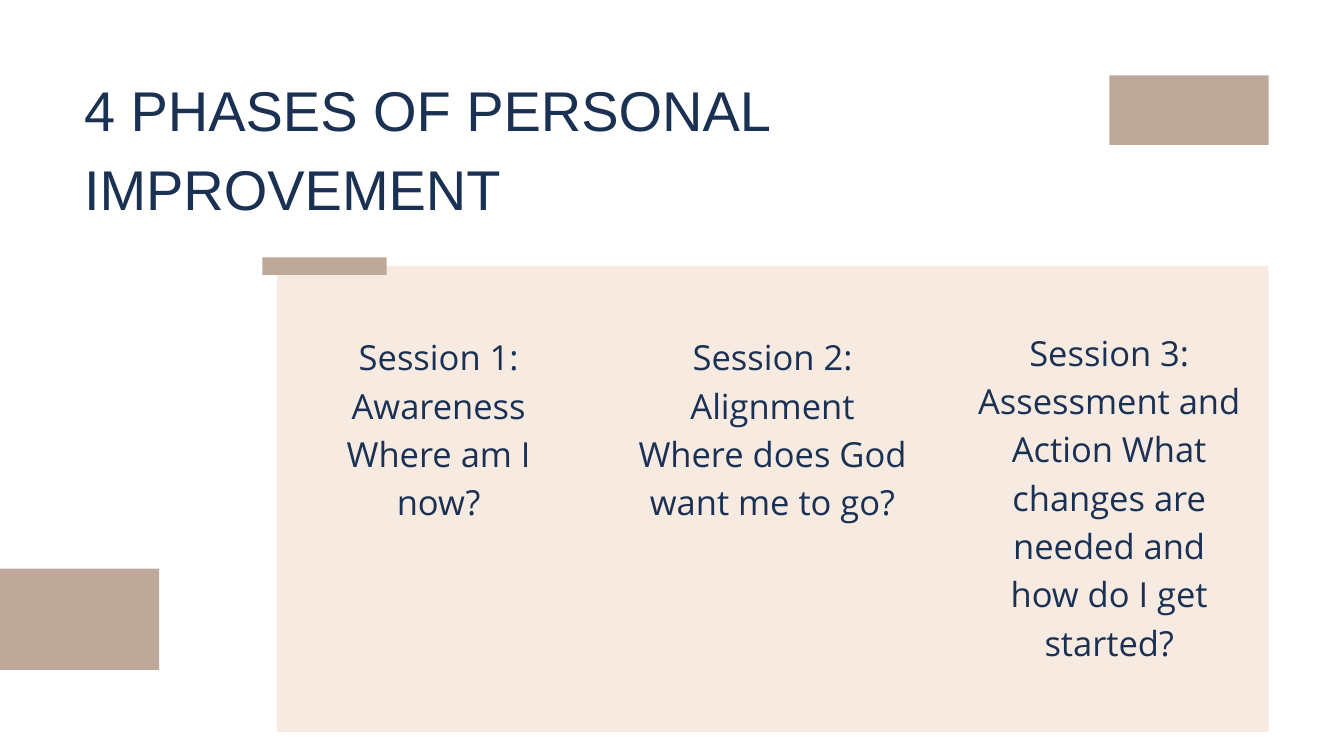
from pptx import Presentation
from pptx.dml.color import RGBColor
from pptx.enum.shapes import MSO_SHAPE
from pptx.enum.text import MSO_ANCHOR, MSO_AUTO_SIZE, PP_ALIGN
from pptx.util import Pt

COLORS = {"navy": "1A3154", "taupe": "BDA899", "cream": "F6EAE1", "white": "FFFFFF"}

TITLE = "4 PHASES OF PERSONAL IMPROVEMENT"
TITLE_BOX = (90, 69.1, 1047.6, 167.8)

SESSIONS = [
    ("Session 1: Awareness Where am I now?", 326.2, 352.8, 205),
    ("Session 2: Alignment Where does God want me to go?", 684, 352.8, 256),
    ("Session 3: Assessment and Action What changes are needed and how do I get started?",
     1044.7, 347.8, 360),
]
SESSION_WIDTH = 287.5

BLOCKS = [
    ("cream", 296.6, 285.1, 1062.8, 499),
    ("taupe", 281.2, 275.8, 133, 18.7),
    ("taupe", -77.8, 609.1, 248.4, 108.7),
    ("taupe", 1188.7, 80.9, 170.7, 74.5),
]


def color(name):
    return RGBColor.from_string(COLORS[name])


def add_block(slide, fill, *box):
    shape = slide.shapes.add_shape(MSO_SHAPE.RECTANGLE, *map(Pt, box))
    shape.shadow.inherit = False
    shape.fill.solid()
    shape.fill.fore_color.rgb = color(fill)
    shape.line.fill.background()


def write_text(shape, text, font_name, size, line_spacing, alignment):
    frame = shape.text_frame
    frame.word_wrap = True
    frame.auto_size = MSO_AUTO_SIZE.NONE
    frame.vertical_anchor = MSO_ANCHOR.TOP
    frame.margin_left = frame.margin_right = frame.margin_top = frame.margin_bottom = 0
    paragraph = frame.paragraphs[0]
    paragraph.alignment = alignment
    paragraph.line_spacing = Pt(line_spacing)
    paragraph.space_before = Pt(0)
    run = paragraph.add_run()
    run.text = text
    run.font.name = font_name
    run.font.size = Pt(size)
    run.font.color.rgb = color("navy")


def main():
    presentation = Presentation()
    presentation.slide_width = Pt(1440)
    presentation.slide_height = Pt(810)
    slide = presentation.slides.add_slide(presentation.slide_layouts[5])
    slide.background.fill.solid()
    slide.background.fill.fore_color.rgb = color("white")

    title = slide.shapes.title
    title.left, title.top, title.width, title.height = map(Pt, TITLE_BOX)
    write_text(title, TITLE, "Arial", 60, 84, PP_ALIGN.LEFT)

    for block in BLOCKS:
        add_block(slide, *block)

    for text, left, top, height in SESSIONS:
        box = slide.shapes.add_textbox(Pt(left), Pt(top), Pt(SESSION_WIDTH), Pt(height))
        write_text(box, text, "Open Sans", 37, 51.8, PP_ALIGN.CENTER)

    presentation.save("out.pptx")


if __name__ == "__main__":
    main()
